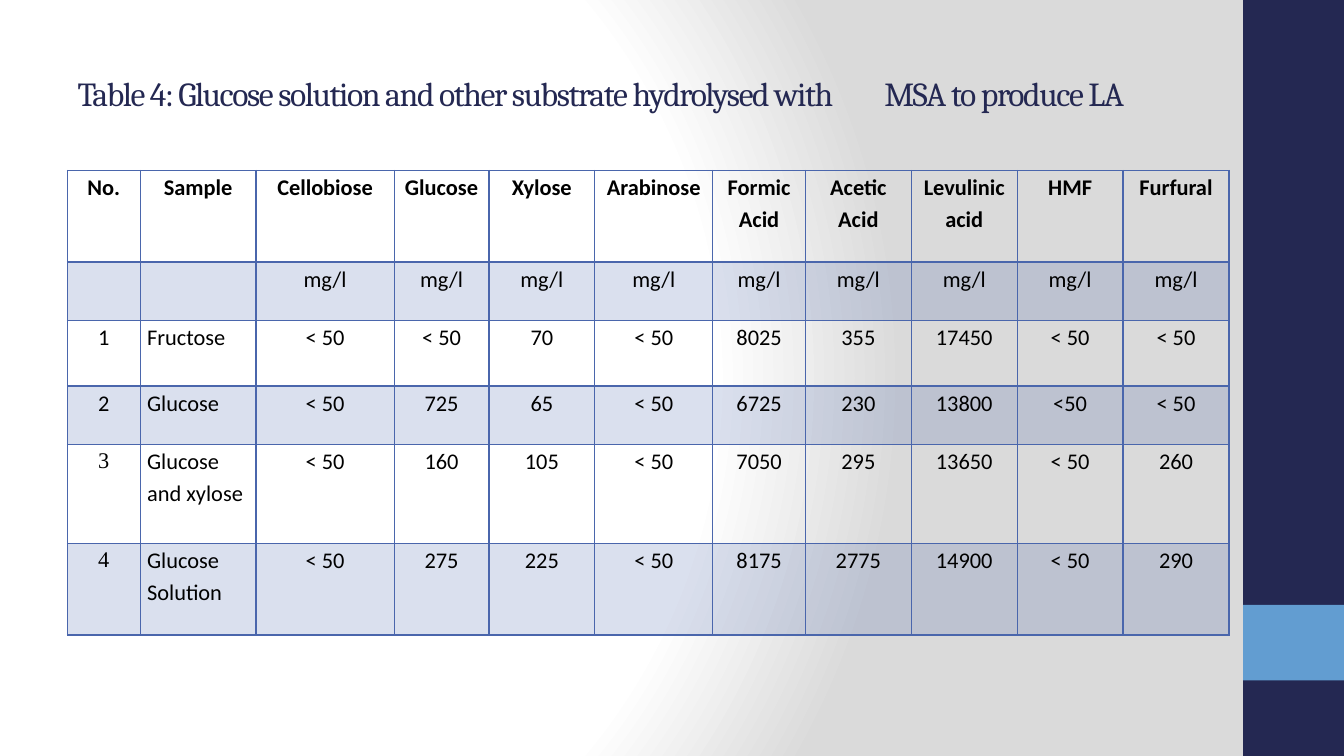
from lxml import etree
from pptx import Presentation
from pptx.dml.color import RGBColor
from pptx.enum.shapes import MSO_SHAPE
from pptx.enum.text import MSO_ANCHOR, PP_ALIGN
from pptx.oxml import parse_xml
from pptx.oxml.ns import nsdecls, qn
from pptx.util import Inches, Pt

RECT = MSO_SHAPE.RECTANGLE
MIDDLE, TOP = MSO_ANCHOR.MIDDLE, MSO_ANCHOR.TOP
LEFT, CENTER = PP_ALIGN.LEFT, PP_ALIGN.CENTER

NAVY = RGBColor(0x24, 0x28, 0x52)
SKY = RGBColor(0x62, 0x9D, 0xD1)
BLUE = RGBColor(0x4A, 0x66, 0xAC)
BLACK = RGBColor(0, 0, 0)
WHITE = RGBColor(0xFF, 0xFF, 0xFF)
GREY = RGBColor(0xDA, 0xDA, 0xDA)

COLS = [0.72, 1.15, 1.37, 0.94, 1.05, 1.17, 0.92] + [1.05] * 4
ROWS = [0.91, 0.58, 0.65, 0.58, 0.98, 0.91]
LOW = "< 50"
DATA = [
    ["No.", "Sample", "Cellobiose", "Glucose", "Xylose", "Arabinose",
     "Formic Acid", "Acetic Acid", "Levulinic acid", "HMF", "Furfural"],
    ["", ""] + ["mg/l"] * 9,
    ["1", "Fructose", LOW, LOW, "70", LOW, "8025", "355", "17450", LOW, LOW],
    ["2", "Glucose", LOW, "725", "65", LOW, "6725", "230", "13800", "<50", LOW],
    ["3", "Glucose and xylose", LOW, "160", "105", LOW, "7050", "295", "13650", LOW, "260"],
    ["4", "Glucose Solution", LOW, "275", "225", LOW, "8175", "2775", "14900", LOW, "290"],
]


class Deck:
    head, body, serif = "Cambria", "Calibri", "Times New Roman"

    def __init__(self):
        self.prs = Presentation()
        self.prs.slide_width, self.prs.slide_height = Inches(13.33), Inches(7.5)
        self.slide = self.prs.slides.add_slide(self.prs.slide_layouts[5])

    def back(self, stops):
        """Circular gradient behind the slide."""
        marks = "".join(f'<a:gs pos="{pos * 1000}"><a:srgbClr val="{color}"/></a:gs>'
                        for pos, color in stops)
        self.slide.element.cSld.insert(0, parse_xml(
            f'<p:bg {nsdecls("p", "a")}><p:bgPr><a:gradFill rotWithShape="1">'
            f'<a:gsLst>{marks}</a:gsLst><a:path path="circle">'
            '<a:fillToRect l="20000" t="50000" r="100000" b="50000"/></a:path>'
            '</a:gradFill><a:effectLst/></p:bgPr></p:bg>'))

    def bar(self, x, y, w, h, color):
        bar = self.slide.shapes.add_shape(RECT, Inches(x), Inches(y), Inches(w), Inches(h))
        bar.shadow.inherit = False
        bar.fill.solid()
        bar.fill.fore_color.rgb = color
        bar.line.fill.background()

    def add_text(self, para, text, font, size, color, bold=False):
        run = para.add_run()
        run.text = text
        run.font.name, run.font.size, run.font.bold = font, Pt(size), bold
        run.font.color.rgb = color
        return run

    def title(self, text, x, y, w, h):
        box = self.slide.shapes.title
        box.left, box.top, box.width, box.height = Inches(x), Inches(y), Inches(w), Inches(h)
        frame = box.text_frame
        frame.word_wrap, frame.vertical_anchor = True, MIDDLE
        para = frame.paragraphs[0]
        para.alignment = LEFT
        run = self.add_text(para, text, self.head, 24, NAVY)
        run._r.get_or_add_rPr().set("spc", "-100")

    def edge(self, cell, top, base):
        """Left, right, top and bottom borders, widths in points."""
        props = cell._tc.get_or_add_tcPr()
        for i, (side, width) in enumerate(zip("LRTB", (1, 1, top, base))):
            props.insert(i, parse_xml(
                f'<a:ln{side} {nsdecls("a")} w="{int(Pt(width))}"><a:solidFill>'
                f'<a:srgbClr val="{BLUE}"/></a:solidFill></a:ln{side}>'))

    def tint(self, cell, color, alpha):
        cell.fill.solid()
        cell.fill.fore_color.rgb = color
        tone = cell._tc.tcPr.find(".//" + qn("a:srgbClr"))
        etree.SubElement(tone, qn("a:alpha")).set("val", str(alpha * 1000))

    def table(self, data, cols, rows, x, y):
        grid = self.slide.shapes.add_table(
            len(rows), len(cols), Inches(x), Inches(y),
            Inches(sum(cols)), Inches(sum(rows))).table
        grid.first_row = grid.horz_banding = False
        for col, width in zip(grid.columns, cols):
            col.width = Inches(width)
        for row, height in zip(grid.rows, rows):
            row.height = Inches(height)
        for r, line in enumerate(data):
            for c, text in enumerate(line):
                cell = grid.cell(r, c)
                if r % 2:
                    self.tint(cell, BLUE, 20)
                else:
                    cell.fill.background()
                self.edge(cell, 2 if r == 1 else 1, 2 if r == 0 else 1)
                if not text:
                    continue
                cell.margin_left = cell.margin_right = Inches(0.07)
                cell.margin_top = cell.margin_bottom = 0
                cell.vertical_anchor = TOP
                para = cell.text_frame.paragraphs[0]
                para.line_spacing = 1.15
                para.alignment = LEFT if c == 1 and r > 1 else CENTER
                font = self.serif if c == 0 and r > 3 else self.body
                self.add_text(para, text, font, 16, BLACK, r == 0)


def main():
    deck = Deck()
    # Background and side bars
    deck.back([(0, WHITE), (75, WHITE), (100, GREY)])
    deck.bar(12.33, 0, 1, 7.5, NAVY)
    deck.bar(12.33, 6, 1, 0.75, SKY)
    # Title
    deck.title("Table 4: Glucose solution and other substrate hydrolysed with "
               "\tMSA to produce LA", 0.67, 0.3, 11.66, 1.25)
    # Results
    deck.table(DATA, COLS, ROWS, 0.67, 1.69)
    deck.prs.save("out.pptx")


if __name__ == "__main__":
    main()
